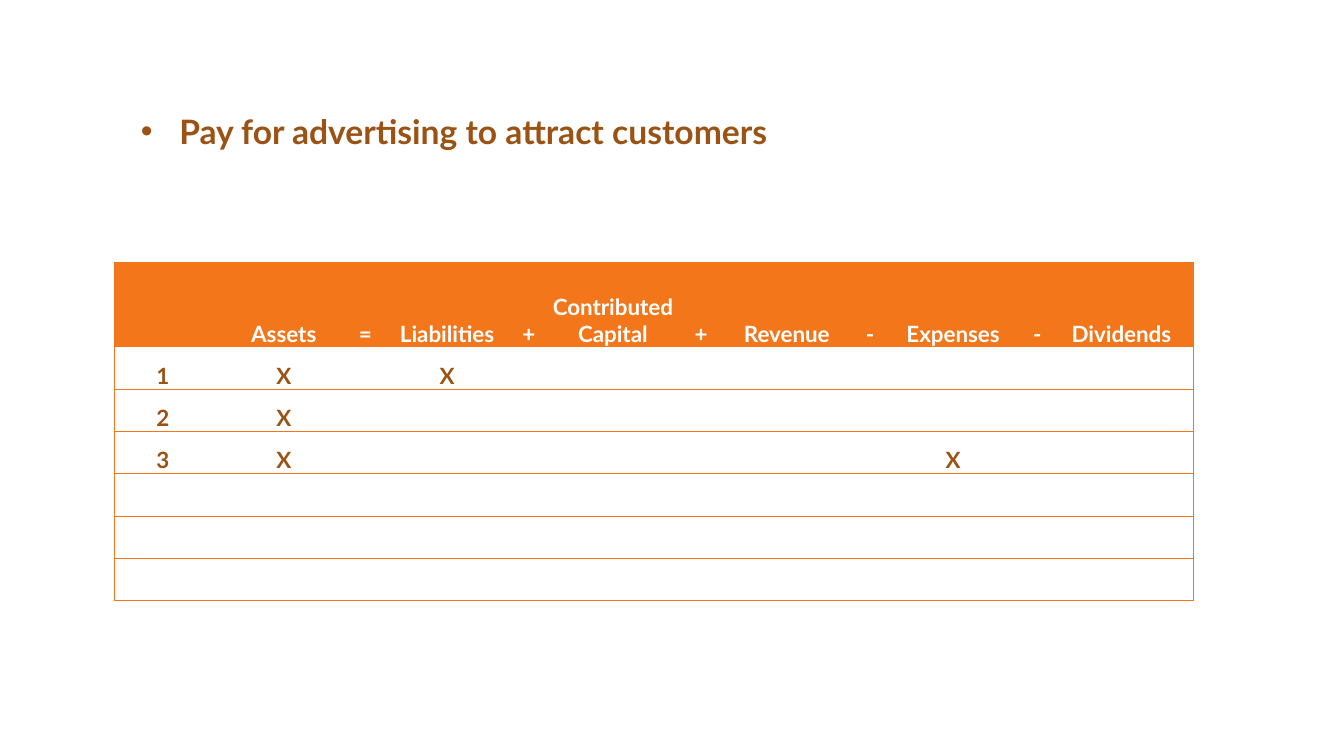
from lxml import etree
from pptx import Presentation
from pptx.dml.color import RGBColor
from pptx.enum.text import MSO_ANCHOR, PP_ALIGN
from pptx.oxml.ns import qn
from pptx.util import Inches, Pt

BOTTOM = MSO_ANCHOR.BOTTOM
CENTER = PP_ALIGN.CENTER
ORANGE, BROWN, WHITE = "F3771A", "9A5315", "FFFFFF"
FONT = "Lato"
WIDTHS = [0.97, 1.43, 0.19, 1.43, 0.19, 1.48, 0.27, 1.43, 0.22, 1.43, 0.24, 1.43]
HEAD_H, ROW_H = 0.84, 0.42
HEADS = ["", "Assets", "=", "Liabilities", "+", "Contributed Capital", "+",
         "Revenue", "-", "Expenses", "-", "Dividends"]
MARKS = [("Assets", "Liabilities"), ("Assets",), ("Assets", "Expenses")]
BLANK_ROWS = 3


def color(value):
    return RGBColor.from_string(value)


def style(para, size, tint):
    font = para.font
    font.name, font.size, font.bold = FONT, Pt(size), True
    font.color.rgb = color(tint)


def add_title(slide, left, top, width, height, text):
    """Place one bulleted line at the top of the box."""
    box = slide.shapes.add_textbox(*map(Inches, (left, top, width, height)))
    box.text_frame.word_wrap = True
    para = box.text_frame.paragraphs[0]
    para.text = text
    props = para._p.get_or_add_pPr()
    props.set("marL", str(Inches(0.38)))
    props.set("indent", str(-Inches(0.38)))
    etree.SubElement(props, qn("a:buFont")).set("typeface", "Arial")
    etree.SubElement(props, qn("a:buChar")).set("char", "•")
    style(para, 24, BROWN)


def set_edges(cell, tints):
    """Draw the left, right, top and bottom edges; None hides an edge."""
    props = cell._tc.get_or_add_tcPr()
    for side, tint in zip("LRTB", tints):
        line = etree.SubElement(props, qn(f"a:ln{side}"), w=str(Pt(0.5)))
        if tint:
            fill = etree.SubElement(line, qn("a:solidFill"))
            etree.SubElement(fill, qn("a:srgbClr"), val=tint)
        else:
            etree.SubElement(line, qn("a:noFill"))


def fill_cell(cell, text, tint):
    cell.margin_left = cell.margin_right = cell.margin_top = Inches(0.01)
    cell.margin_bottom = 0
    cell.vertical_anchor = BOTTOM
    para = cell.text_frame.paragraphs[0]
    para.text = text
    para.alignment = CENTER
    style(para, 16, tint)


def add_grid(slide, left, top):
    """Place the table of accounts with its top left corner at the point."""
    marked = [[str(num)] + ["X" if head in marks else "" for head in HEADS[1:]]
              for num, marks in enumerate(MARKS, 1)]
    rows = [HEADS] + marked + [[""] * len(HEADS)] * BLANK_ROWS
    heights = [HEAD_H] + [ROW_H] * (len(rows) - 1)
    table = slide.shapes.add_table(
        len(rows), len(WIDTHS), Inches(left), Inches(top),
        Inches(sum(WIDTHS)), Inches(sum(heights))).table
    for col, width in zip(table.columns, WIDTHS):
        col.width = Inches(width)
    last = len(WIDTHS) - 1
    for i, (row, texts) in enumerate(zip(table.rows, rows)):
        row.height = Inches(heights[i])
        for j, (cell, text) in enumerate(zip(row.cells, texts)):
            set_edges(cell, (ORANGE if j == 0 else None,
                             ORANGE if j == last else None, ORANGE, ORANGE))
            fill_cell(cell, text, BROWN if i else WHITE)
            if i:
                cell.fill.background()
            else:
                cell.fill.solid()
                cell.fill.fore_color.rgb = color(ORANGE)


def main():
    deck = Presentation()
    deck.slide_width, deck.slide_height = Inches(13.33), Inches(7.5)
    slide = deck.slides.add_slide(deck.slide_layouts[6])
    add_title(slide, 1.3, 1.05, 11, 5.8, "Pay for advertising to attract customers")
    add_grid(slide, 1.13, 2.6)
    deck.save("out.pptx")


if __name__ == "__main__":
    main()
